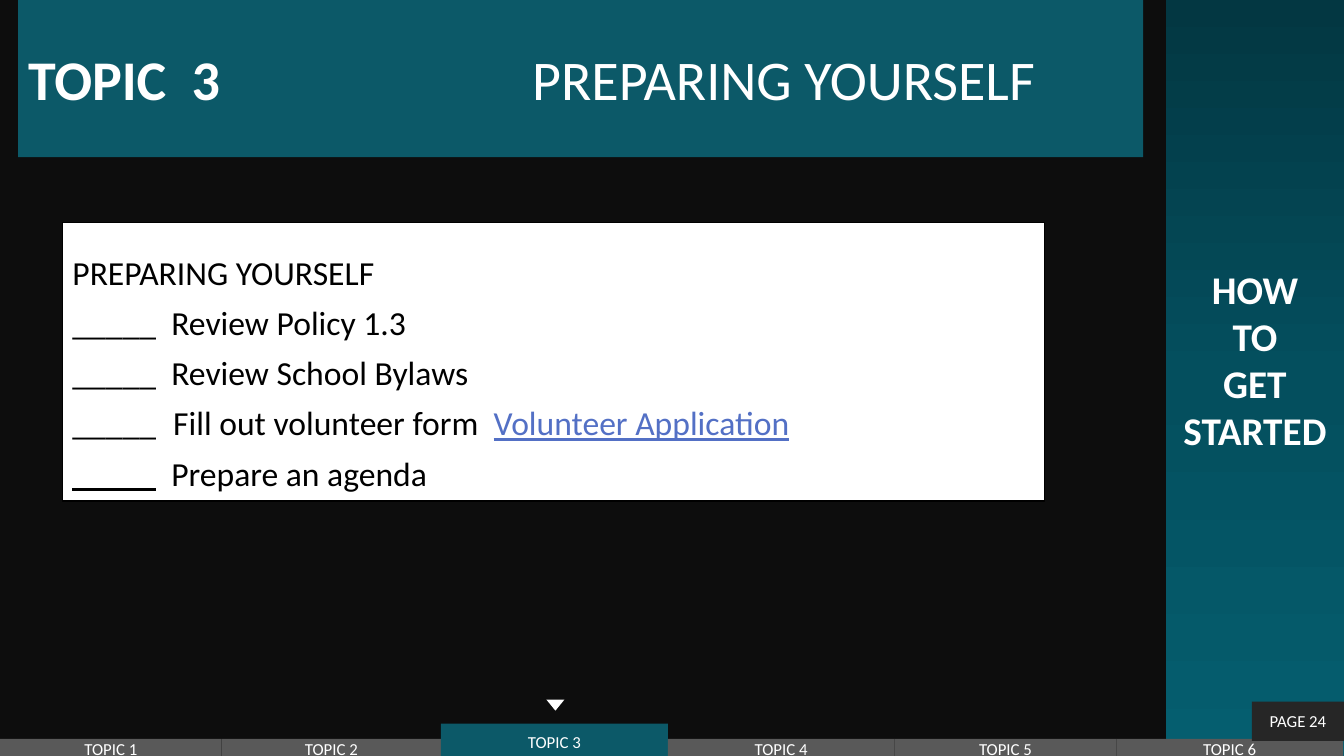
from copy import deepcopy
from itertools import accumulate

from pptx import Presentation
from pptx import util as u
from pptx.dml.color import RGBColor
from pptx.enum import shapes, text
from pptx.oxml import ns, xmlchemy

WIDTH, HEIGHT = u.Inches(13.33), u.Inches(7.5)
COLUMN, ROW = WIDTH / 160, HEIGHT / 90

BACKGROUND = RGBColor(0x0D, 0x0D, 0x0D)
TEAL = RGBColor(0x0C, 0x59, 0x68)
SIDEBAR_STOPS = [
    RGBColor(0x03, 0x37, 0x42),
    RGBColor(0x04, 0x4F, 0x5E),
    RGBColor(0x05, 0x5E, 0x6F),
]
TAB_GRAY = RGBColor(0x59, 0x59, 0x59)
PAGE_GRAY = RGBColor(0x26, 0x26, 0x26)
LINK_BLUE = RGBColor(0x53, 0x70, 0xC5)
WHITE = RGBColor(0xFF, 0xFF, 0xFF)
BLACK = RGBColor(0x00, 0x00, 0x00)

TAB_WIDTHS = [26.4, 26.1, 27, 27, 26.4, 27]
ACTIVE_TOPIC = 3
CHECKLIST = [
    ["PREPARING YOURSELF"],
    ["_____  Review Policy 1.3"],
    ["_____  Review School Bylaws"],
    ["_____\tFill out volunteer form  ", "Volunteer Application"],
    ["_____", "  Prepare an agenda"],
]


def add_block(slide, left, top, width, height, color,
              kind=shapes.MSO_SHAPE.RECTANGLE):
    shape = slide.shapes.add_shape(
        kind, round(left * COLUMN), round(top * ROW),
        round(width * COLUMN), round(height * ROW))
    shape.shadow.inherit = False
    shape.fill.solid()
    shape.fill.fore_color.rgb = color
    shape.line.fill.background()
    shape.text_frame.word_wrap = True
    return shape


def style(font, size, color, bold=False):
    font.name = "Calibri"
    font.size = u.Pt(size)
    font.color.rgb = color
    font.bold = bold


def write_label(shape, label, size, bold=False):
    frame = shape.text_frame
    frame.vertical_anchor = text.MSO_ANCHOR.MIDDLE
    frame.margin_top = frame.margin_bottom = 0
    paragraph = frame.paragraphs[0]
    paragraph.text = label
    paragraph.alignment = text.PP_ALIGN.CENTER
    style(paragraph.font, size, WHITE, bold)


def add_sidebar(slide):
    sidebar = add_block(slide, 138.8, 0, 21.2, 90, TEAL)
    sidebar.fill.gradient()
    sidebar.fill.gradient_angle = 270
    stop_list = sidebar._element.spPr.find(".//" + ns.qn("a:gsLst"))
    stop_list.append(deepcopy(stop_list[-1]))
    for index, color in enumerate(SIDEBAR_STOPS):
        stop = sidebar.fill.gradient_stops[index]
        stop.position = index / 2
        stop.color.rgb = color
    write_label(sidebar, "HOW\vTO\vGET\vSTARTED", 28, bold=True)
    sidebar.text_frame.margin_bottom = u.Inches(0.37)


def add_banner(slide):
    banner = add_block(slide, 2.16, -0.24, 133.92, 18.96, TEAL)
    banner.text_frame.vertical_anchor = text.MSO_ANCHOR.MIDDLE
    paragraph = banner.text_frame.paragraphs[0]
    paragraph.alignment = text.PP_ALIGN.LEFT
    tabs = xmlchemy.OxmlElement("a:tabLst")
    tab = xmlchemy.OxmlElement("a:tab")
    tab.set("pos", str(u.Inches(5)))
    tab.set("algn", "l")
    tabs.append(tab)
    paragraph._p.get_or_add_pPr().append(tabs)
    for words, bold in [("TOPIC  3\t", True), ("PREPARING YOURSELF", False)]:
        run = paragraph.add_run()
        run.text = words
        style(run.font, 40, WHITE, bold)


def add_checklist(slide):
    card = add_block(slide, 7.44, 26.52, 116.88, 33.12, WHITE)
    card.line.color.rgb = BLACK
    card.line.width = u.Pt(1)
    frame = card.text_frame
    frame.vertical_anchor = text.MSO_ANCHOR.TOP
    frame.margin_top = u.Inches(0.33)
    for index, parts in enumerate(CHECKLIST):
        paragraph = frame.add_paragraph() if index else frame.paragraphs[0]
        paragraph.alignment = text.PP_ALIGN.LEFT
        paragraph.line_spacing = 0.9
        if index:
            paragraph.space_before = u.Pt(10)
        for part in parts:
            run = paragraph.add_run()
            run.text = part
            style(run.font, 24, BLACK)
    link = frame.paragraphs[3].runs[1]
    link.font.color.rgb = LINK_BLUE
    link.font.underline = True
    frame.paragraphs[4].runs[0].font.underline = True


def add_topic_tabs(slide):
    lefts = accumulate(TAB_WIDTHS, initial=0)
    for topic, (left, width) in enumerate(zip(lefts, TAB_WIDTHS), start=1):
        if topic == ACTIVE_TOPIC:
            tab = add_block(slide, left, 86.16, width, 4.2, TEAL)
        else:
            tab = add_block(slide, left, 87.96, width, 2.4, TAB_GRAY)
        write_label(tab, f"TOPIC {topic}", 12)
    marker = add_block(slide, 65.04, 83.28, 2.16, 1.32, WHITE,
                       shapes.MSO_SHAPE.ISOSCELES_TRIANGLE)
    marker.rotation = 180


def main():
    presentation = Presentation()
    presentation.slide_width, presentation.slide_height = WIDTH, HEIGHT
    slide = presentation.slides.add_slide(presentation.slide_layouts[6])
    slide.background.fill.solid()
    slide.background.fill.fore_color.rgb = BACKGROUND
    add_sidebar(slide)
    add_banner(slide)
    add_checklist(slide)
    add_topic_tabs(slide)
    page = add_block(slide, 149.04, 83.52, 10.96, 4.68, PAGE_GRAY)
    write_label(page, "PAGE 24", 12)
    presentation.save("out.pptx")


if __name__ == "__main__":
    main()
